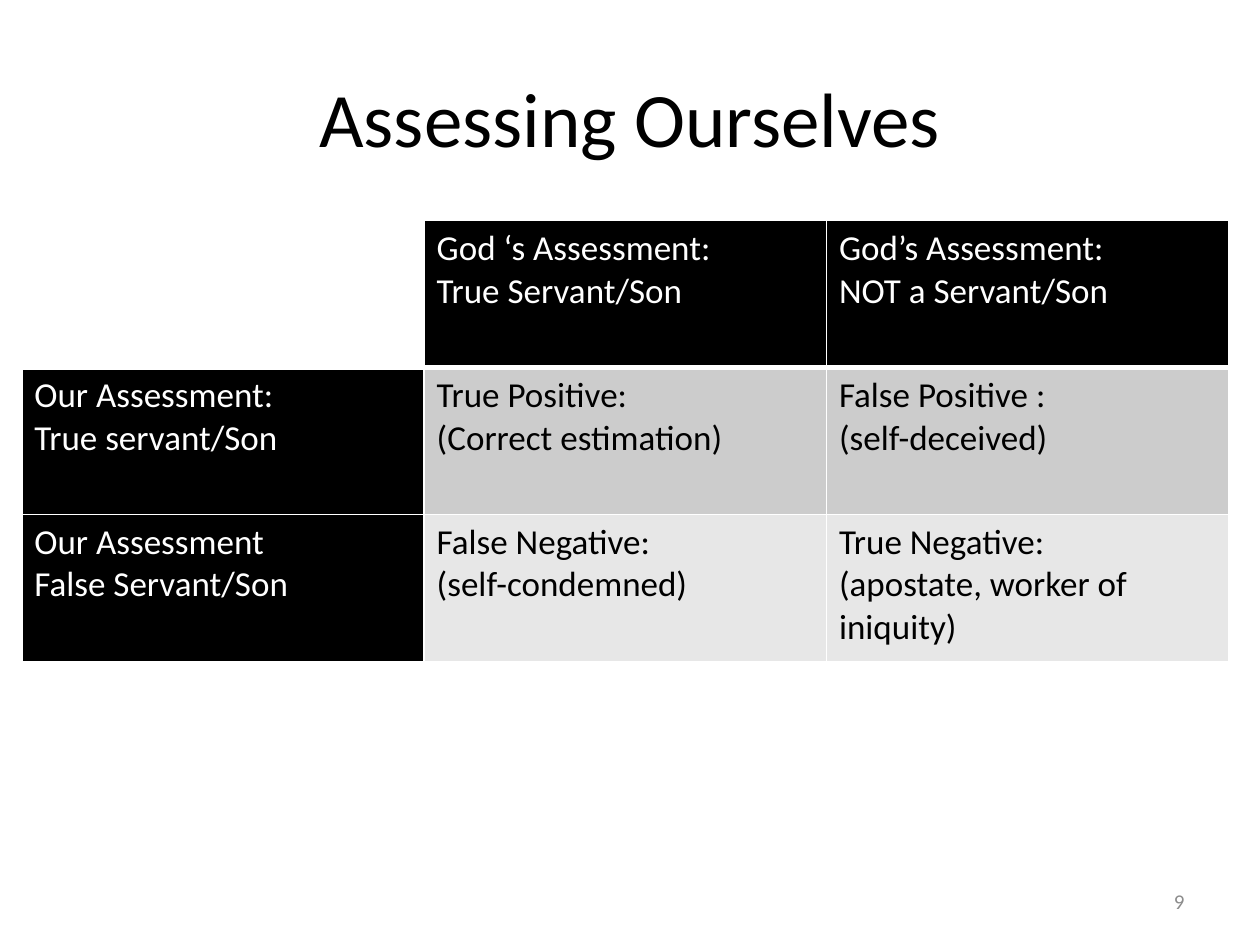
"""Build a slide that sets our own assessment against God's."""
from lxml import etree
from pptx import Presentation
from pptx.dml.color import RGBColor
from pptx.enum.text import MSO_ANCHOR, PP_ALIGN
from pptx.oxml.ns import qn
from pptx.util import Cm, Pt

LEFT, CENTER, RIGHT = PP_ALIGN.LEFT, PP_ALIGN.CENTER, PP_ALIGN.RIGHT
MIDDLE = MSO_ANCHOR.MIDDLE
BLACK = RGBColor(0x00, 0x00, 0x00)
WHITE = RGBColor(0xFF, 0xFF, 0xFF)
NUMBER_GRAY = RGBColor(0x8C, 0x8C, 0x8C)
BAND_FILLS = [RGBColor(0xCC, 0xCC, 0xCC), RGBColor(0xE7, 0xE7, 0xE7)]
FONT = "Calibri"
COLUMN_WIDTH, ROW_HEIGHT = Cm(8.11), Cm(2.96)
ASSESSMENTS = [
    ["", "God ‘s Assessment:\nTrue Servant/Son", "God’s Assessment:\nNOT a Servant/Son"],
    ["Our Assessment:\nTrue servant/Son", "True Positive:\n(Correct estimation)",
     "False Positive :\n(self-deceived)"],
    ["Our Assessment\nFalse Servant/Son", "False Negative:\n(self-condemned)",
     "True Negative:\n(apostate, worker of iniquity)"],
]


def write_text(frame, text, size=20, color=BLACK, align=LEFT):
    frame.word_wrap = True
    frame.text = text
    for paragraph in frame.paragraphs:
        paragraph.alignment = align
        font = paragraph.font
        font.name, font.size = FONT, Pt(size)
        font.color.rgb = color
        for run in paragraph.runs:
            run.font.name, run.font.size = FONT, Pt(size)
            run.font.color.rgb = color


def add_label(slide, text, left, top, width, height, **text_format):
    frame = slide.shapes.add_textbox(Cm(left), Cm(top), Cm(width), Cm(height)).text_frame
    frame.vertical_anchor = MIDDLE
    write_text(frame, text, **text_format)


def add_borders(cell, bottom_width):
    properties = cell._tc.get_or_add_tcPr()
    for side, width in (("L", 1), ("R", 1), ("T", 1), ("B", bottom_width)):
        line = etree.SubElement(properties, qn(f"a:ln{side}"), w=str(Pt(width)))
        fill = etree.SubElement(line, qn("a:solidFill"))
        etree.SubElement(fill, qn("a:srgbClr"), val=str(WHITE))


def cell_colors(row, column):
    if row == 0 and column == 0:
        return WHITE, BLACK
    if row == 0 or column == 0:
        return BLACK, WHITE
    return BAND_FILLS[row - 1], BLACK


def add_assessment_table(slide, left, top):
    row_count, column_count = len(ASSESSMENTS), len(ASSESSMENTS[0])
    table = slide.shapes.add_table(
        row_count, column_count, Cm(left), Cm(top),
        COLUMN_WIDTH * column_count, ROW_HEIGHT * row_count).table
    for column in table.columns:
        column.width = COLUMN_WIDTH
    for row_index, row_texts in enumerate(ASSESSMENTS):
        table.rows[row_index].height = ROW_HEIGHT
        for column_index, text in enumerate(row_texts):
            cell = table.cell(row_index, column_index)
            background, text_color = cell_colors(row_index, column_index)
            add_borders(cell, bottom_width=3 if row_index == 0 else 1)
            cell.fill.solid()
            cell.fill.fore_color.rgb = background
            write_text(cell.text_frame, text, color=text_color)


def main():
    presentation = Presentation()
    presentation.slide_width, presentation.slide_height = Cm(25.4), Cm(19.05)
    slide = presentation.slides.add_slide(presentation.slide_layouts[6])
    add_label(slide, "Assessing Ourselves", 1.27, 0.76, 22.86, 3.18, size=44, align=CENTER)
    add_assessment_table(slide, 0.44, 4.45)
    add_label(slide, "9", 18.2, 17.66, 5.93, 1.01, size=12, color=NUMBER_GRAY, align=RIGHT)
    presentation.save("out.pptx")


if __name__ == "__main__":
    main()
